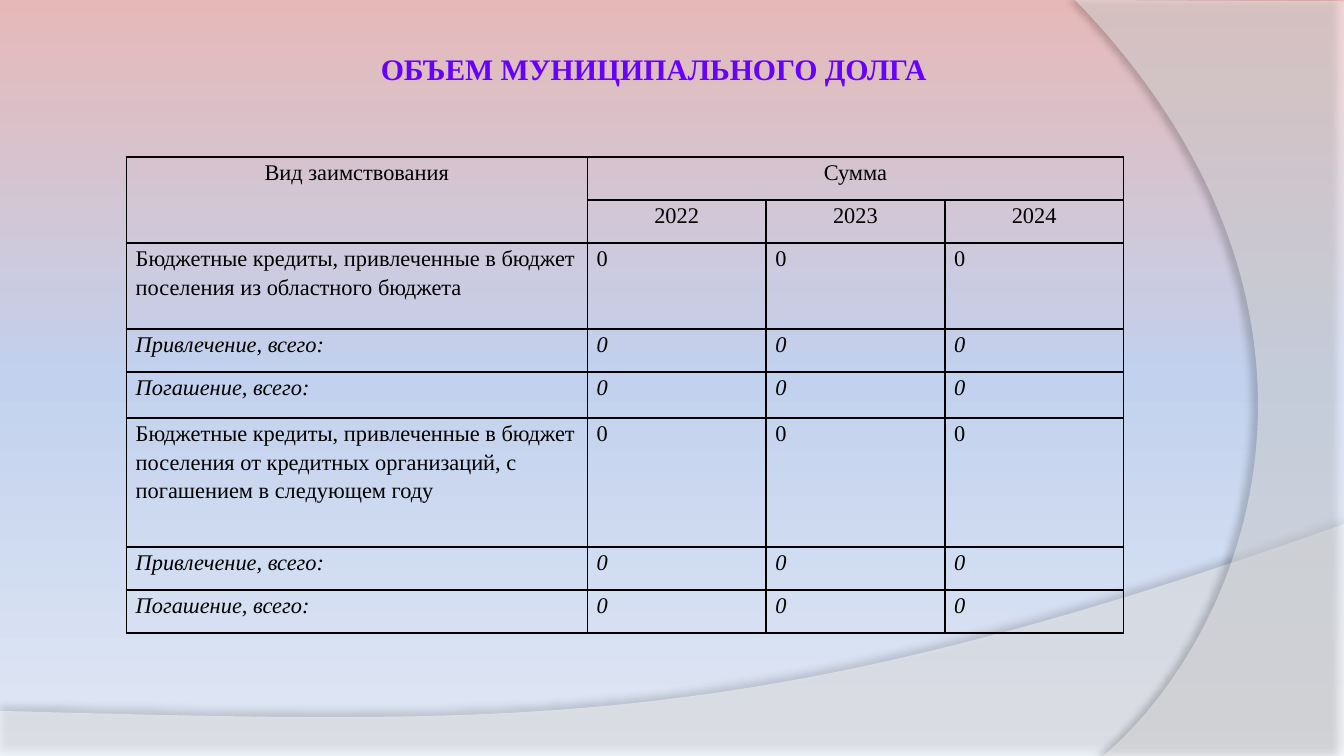
from copy import deepcopy

from lxml.etree import SubElement
from pptx import Presentation
from pptx.dml.color import RGBColor
from pptx.enum.text import PP_ALIGN
from pptx.oxml.ns import qn
from pptx.util import Inches, Pt

PINK = RGBColor(0xE6, 0xB9, 0xB8)
BLUE = RGBColor(0xC2, 0xD1, 0xED)
PALE_BLUE = RGBColor(0xE1, 0xE8, 0xF5)
WHITE = RGBColor(0xFF, 0xFF, 0xFF)
BLACK = RGBColor(0x00, 0x00, 0x00)
VIOLET = RGBColor(0x66, 0x00, 0xFF)
FONT = "Times New Roman"
CURVE_STEPS = 60
SLIDE_WIDTH = 10
SLIDE_HEIGHT = SLIDE_WIDTH * 9 / 16


def curve_points(start, control_1, control_2, end):
    """Return points along a cubic Bezier curve, both ends included."""
    points = []
    for step in range(CURVE_STEPS + 1):
        t = step / CURVE_STEPS
        weights = ((1 - t) ** 3, 3 * t * (1 - t) ** 2, 3 * t ** 2 * (1 - t), t ** 3)
        points.append(tuple(
            sum(w * c for w, c in zip(weights, coords))
            for coords in zip(start, control_1, control_2, end)
        ))
    return points


def add_run(paragraph, text, size, color, bold=False, italic=False):
    run = paragraph.add_run()
    run.text = text
    run.font.name = FONT
    run.font.size = Pt(size)
    run.font.color.rgb = color
    run.font.bold = bold
    run.font.italic = italic


prs = Presentation()
prs.slide_width = Inches(SLIDE_WIDTH)
prs.slide_height = Inches(SLIDE_HEIGHT)
slide = prs.slides.add_slide(prs.slide_layouts[6])

# Background gradient, top to bottom
background = slide.background.fill
background.gradient()
background.gradient_angle = 270
stop_list = slide.element.find(".//" + qn("a:gsLst"))
stop_list.append(deepcopy(stop_list[-1]))
for stop, position, color in zip(
    background.gradient_stops, (0, 0.5, 1), (PINK, BLUE, PALE_BLUE)
):
    stop.position = position
    stop.color.rgb = color

# Translucent waves: outline, opacity %, shadow opacity %, distance, direction
bottom_wave = [(0, SLIDE_HEIGHT), (SLIDE_WIDTH, SLIDE_HEIGHT)] + curve_points(
    (SLIDE_WIDTH, 3.9), (5.59, 5.47), (3.91, 5.39), (0, 5.29))
right_wave = [(SLIDE_WIDTH, 0.01), (SLIDE_WIDTH, SLIDE_HEIGHT)] + curve_points(
    (8.21, SLIDE_HEIGHT), (9.35, 4.64), (10.18, 2.25), (8, 0))
waves = [
    (bottom_wave, 45, 35, 3.5, 270),
    (right_wave, 40, 45, 4, 180),
]
for outline, opacity, shadow_opacity, distance, direction in waves:
    corners = [(Inches(x), Inches(y)) for x, y in outline]
    builder = slide.shapes.build_freeform(*corners[0])
    builder.add_line_segments(corners[1:], close=True)
    wave = builder.convert_to_shape()
    wave.fill.solid()
    wave.fill.fore_color.rgb = WHITE
    wave.line.fill.background()
    wave.shadow.inherit = False
    properties = wave.element.spPr
    fill_color = properties.find(qn("a:solidFill"))[0]
    SubElement(fill_color, qn("a:alpha"), val=str(opacity * 1000))
    shadow = SubElement(
        properties.find(qn("a:effectLst")), qn("a:outerShdw"),
        blurRad=str(Pt(4)), dist=str(Pt(distance)),
        dir=str(direction * 60000), algn="ctr", rotWithShape="0")
    shadow_color = SubElement(shadow, qn("a:srgbClr"), val=str(BLACK))
    SubElement(shadow_color, qn("a:alpha"), val=str(shadow_opacity * 1000))

# Title
title = slide.shapes.add_textbox(Inches(1.02), Inches(0.33), Inches(7.69), Inches(0.37))
title.text_frame.word_wrap = True
heading = title.text_frame.paragraphs[0]
heading.alignment = PP_ALIGN.CENTER
add_run(heading, "ОБЪЕМ МУНИЦИПАЛЬНОГО ДОЛГА", 16, VIOLET, bold=True)

# Debt table
ZEROS = ["0"] * 3
ATTRACTED = ["Привлечение, всего:"] + ZEROS
REPAID = ["Погашение, всего:"] + ZEROS
rows = [
    ["Вид заимствования", "Сумма", "", ""],
    ["", "2022", "2023", "2024"],
    ["Бюджетные кредиты, привлеченные в бюджет поселения из областного бюджета"] + ZEROS,
    ATTRACTED,
    REPAID,
    ["Бюджетные кредиты, привлеченные в бюджет поселения от кредитных "
     "организаций, с погашением в следующем году"] + ZEROS,
    ATTRACTED,
    REPAID,
]
column_widths = [3.43, 1.33, 1.33, 1.33]
row_heights = [0.32, 0.32, 0.64, 0.32, 0.34, 0.96, 0.32, 0.32]

debt = slide.shapes.add_table(
    len(rows), len(column_widths), Inches(0.94), Inches(1.17),
    Inches(sum(column_widths)), Inches(sum(row_heights))).table
debt.first_row = False
debt.horz_banding = False
for column, width in zip(debt.columns, column_widths):
    column.width = Inches(width)
for row, height in zip(debt.rows, row_heights):
    row.height = Inches(height)
debt.cell(0, 0).merge(debt.cell(1, 0))
debt.cell(0, 1).merge(debt.cell(0, 3))

for r, texts in enumerate(rows):
    for c, text in enumerate(texts):
        cell = debt.cell(r, c)
        cell.margin_left = cell.margin_right = Inches(0.07)
        cell.margin_top = cell.margin_bottom = 0
        cell_properties = cell._tc.get_or_add_tcPr()
        for side in ("a:lnL", "a:lnR", "a:lnT", "a:lnB"):
            border = SubElement(cell_properties, qn(side), w=str(Pt(1)))
            border_fill = SubElement(border, qn("a:solidFill"))
            SubElement(border_fill, qn("a:srgbClr"), val=str(BLACK))
        cell.fill.background()
        if text:
            paragraph = cell.text_frame.paragraphs[0]
            paragraph.line_spacing = 1.15
            paragraph.alignment = PP_ALIGN.CENTER if r < 2 else PP_ALIGN.LEFT
            add_run(paragraph, text, 12, BLACK, italic=texts in (ATTRACTED, REPAID))

prs.save("out.pptx")
